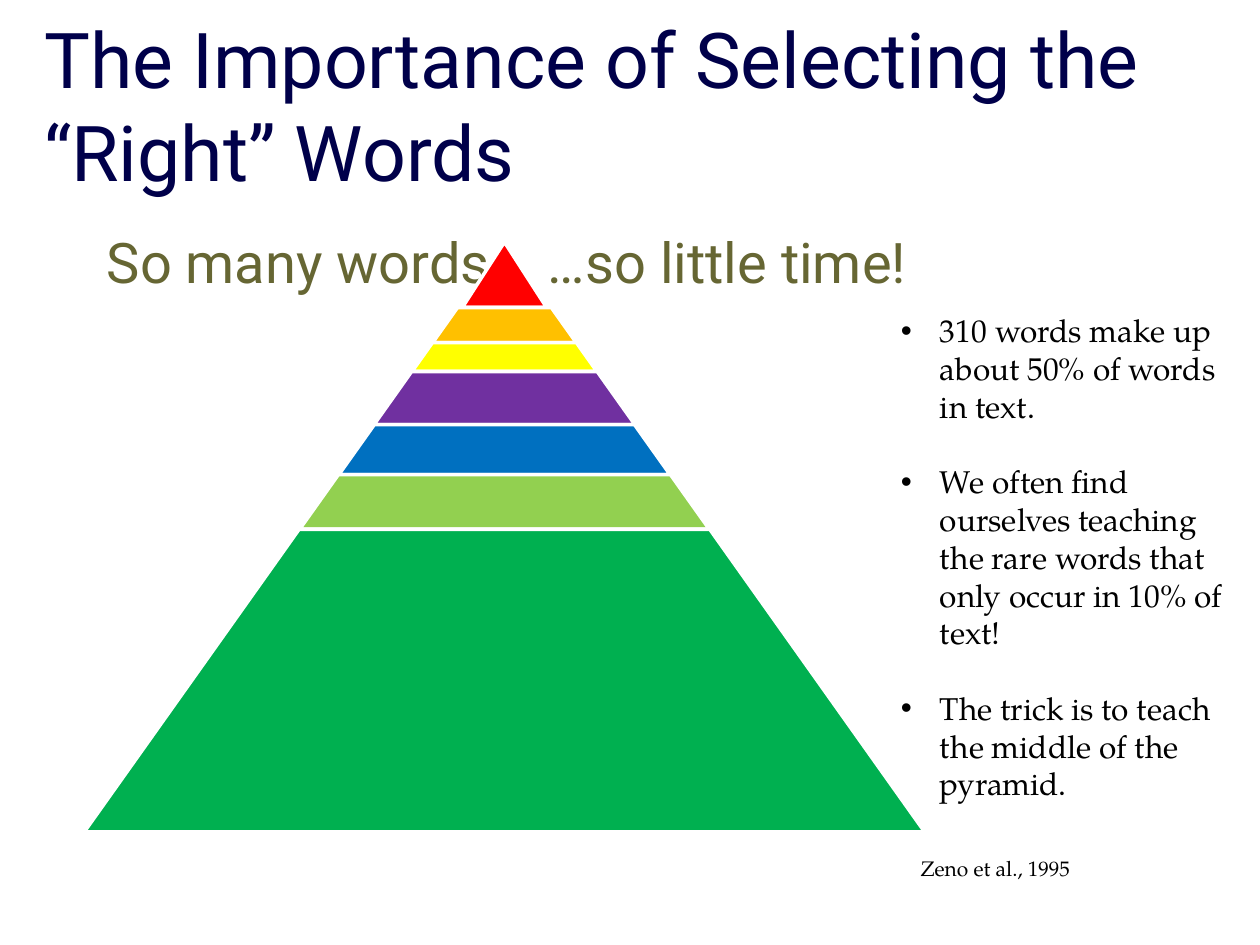
from dataclasses import dataclass
from typing import Any

from lxml.etree import SubElement
from pptx import Presentation
from pptx.dml.color import RGBColor
from pptx.enum.shapes import MSO_SHAPE
from pptx.enum.text import MSO_ANCHOR, MSO_AUTO_SIZE, PP_ALIGN
from pptx.oxml.ns import qn
from pptx.util import Cm, Pt


@dataclass(frozen=True)
class TextStyle:
    font: str
    size: int
    color: str


@dataclass(frozen=True)
class Theme:
    title: TextStyle = TextStyle("Roboto", 44, "00004A")
    subtitle: TextStyle = TextStyle("Roboto", 32, "666633")
    bullet: TextStyle = TextStyle("TeX Gyre Pagella", 18, "000000")
    citation: TextStyle = TextStyle("TeX Gyre Pagella", 12, "000000")
    gap_color: str = "FFFFFF"
    gap_width: float = 2


@dataclass(frozen=True)
class Box:
    """Position and size in centimetres."""
    left: float
    top: float
    width: float
    height: float


@dataclass(frozen=True)
class Tier:
    """One layer of the pyramid, sized in centimetres."""
    width: float
    height: float
    color: str


THEME = Theme()
PYRAMID_CENTER = 10.17
PYRAMID_TOP = 4.88
PYRAMID_SLOPE = 0.71
TIERS = [
    Tier(1.7, 1.32, "FF0000"),
    Tier(2.9, 0.71, "FFC000"),
    Tier(3.73, 0.58, "FFFF00"),
    Tier(5.26, 1.07, "7030A0"),
    Tier(6.68, 1.01, "0070C0"),
    Tier(8.26, 1.1, "92D050"),
    Tier(16.94, 6.1, "00B050"),
]
BULLETS = [
    "310 words make up about 50% of words in text.",
    "We often find ourselves teaching the rare words that only occur in 10% of text!",
    "The trick is to teach the middle of the pyramid.",
]


def place(shape: Any, box: Box) -> None:
    for name in ("left", "top", "width", "height"):
        setattr(shape, name, Cm(getattr(box, name)))


def set_up_frame(shape: Any, anchor: MSO_ANCHOR = MSO_ANCHOR.TOP) -> Any:
    frame = shape.text_frame
    settings = {"word_wrap": True, "auto_size": MSO_AUTO_SIZE.NONE, "vertical_anchor": anchor}
    for name, value in settings.items():
        setattr(frame, name, value)
    return frame


def write(paragraph: Any, text: str, style: TextStyle) -> None:
    paragraph.alignment = PP_ALIGN.LEFT
    paragraph.space_before = Pt(0)
    run = paragraph.add_run()
    run.text = text
    for name, value in {"name": style.font, "size": Pt(style.size), "bold": False}.items():
        setattr(run.font, name, value)
    run.font.color.rgb = RGBColor.from_string(style.color)


def set_indent(paragraph: Any, left: float, first_line: float) -> Any:
    properties = paragraph._p.get_or_add_pPr()
    properties.set("marL", str(Cm(left)))
    properties.set("indent", str(Cm(first_line)))
    return properties


def add_tier(group: Any, tier: Tier, top: float) -> None:
    shape = group.shapes.add_shape(
        MSO_SHAPE.TRAPEZOID, Cm(PYRAMID_CENTER - tier.width / 2), Cm(top),
        Cm(tier.width), Cm(tier.height))
    shape.adjustments[0] = PYRAMID_SLOPE
    shape.shadow.inherit = False
    shape.fill.solid()
    shape.fill.fore_color.rgb = RGBColor.from_string(tier.color)
    shape.line.color.rgb = RGBColor.from_string(THEME.gap_color)
    shape.line.width = Pt(THEME.gap_width)


def add_pyramid(slide: Any) -> None:
    group = slide.shapes.add_group_shape()
    top = PYRAMID_TOP
    for tier in TIERS:
        add_tier(group, tier, top)
        top += tier.height


def add_text_box(slide: Any, box: Box) -> Any:
    shape = slide.shapes.add_textbox(0, 0, 0, 0)
    place(shape, box)
    return set_up_frame(shape)


def add_bullets(slide: Any, box: Box) -> None:
    frame = add_text_box(slide, box)
    for index, text in enumerate(BULLETS):
        paragraph = frame.add_paragraph() if index else frame.paragraphs[0]
        properties = set_indent(paragraph, 0.79, -0.79)
        SubElement(properties, qn("a:buFont"), typeface="Arial")
        SubElement(properties, qn("a:buChar"), char="•")
        if index < len(BULLETS) - 1:
            paragraph.space_after = Pt(21.5)
        write(paragraph, text, THEME.bullet)


def main() -> None:
    presentation = Presentation()
    presentation.slide_width, presentation.slide_height = Cm(25.4), Cm(19.05)
    slide = presentation.slides.add_slide(presentation.slide_layouts[1])

    # Title
    title = slide.shapes.title
    place(title, Box(0.64, 0.64, 24.33, 2.92))
    frame = set_up_frame(title, MSO_ANCHOR.MIDDLE)
    write(frame.paragraphs[0], "The Importance of Selecting the “Right” Words", THEME.title)

    # Subtitle, split by a tab stop around the top of the pyramid
    body = slide.placeholders[1]
    place(body, Box(1.9, 4.45, 21.59, 12.5))
    paragraph = set_up_frame(body).paragraphs[0]
    properties = set_indent(paragraph, 0, 0)
    SubElement(properties, qn("a:buNone"))
    tabs = SubElement(properties, qn("a:tabLst"))
    SubElement(tabs, qn("a:tab"), pos=str(Cm(10.16)), algn="l")
    write(paragraph, "So many words,\t…so little time!", THEME.subtitle)

    # Citation
    frame = add_text_box(slide, Box(18.31, 17.12, 6.99, 0.76))
    write(frame.paragraphs[0], "Zeno et al., 1995", THEME.citation)

    # Pyramid and its takeaways
    add_pyramid(slide)
    add_bullets(slide, Box(17.91, 6.15, 7.42, 10.26))

    presentation.save("out.pptx")


if __name__ == "__main__":
    main()
